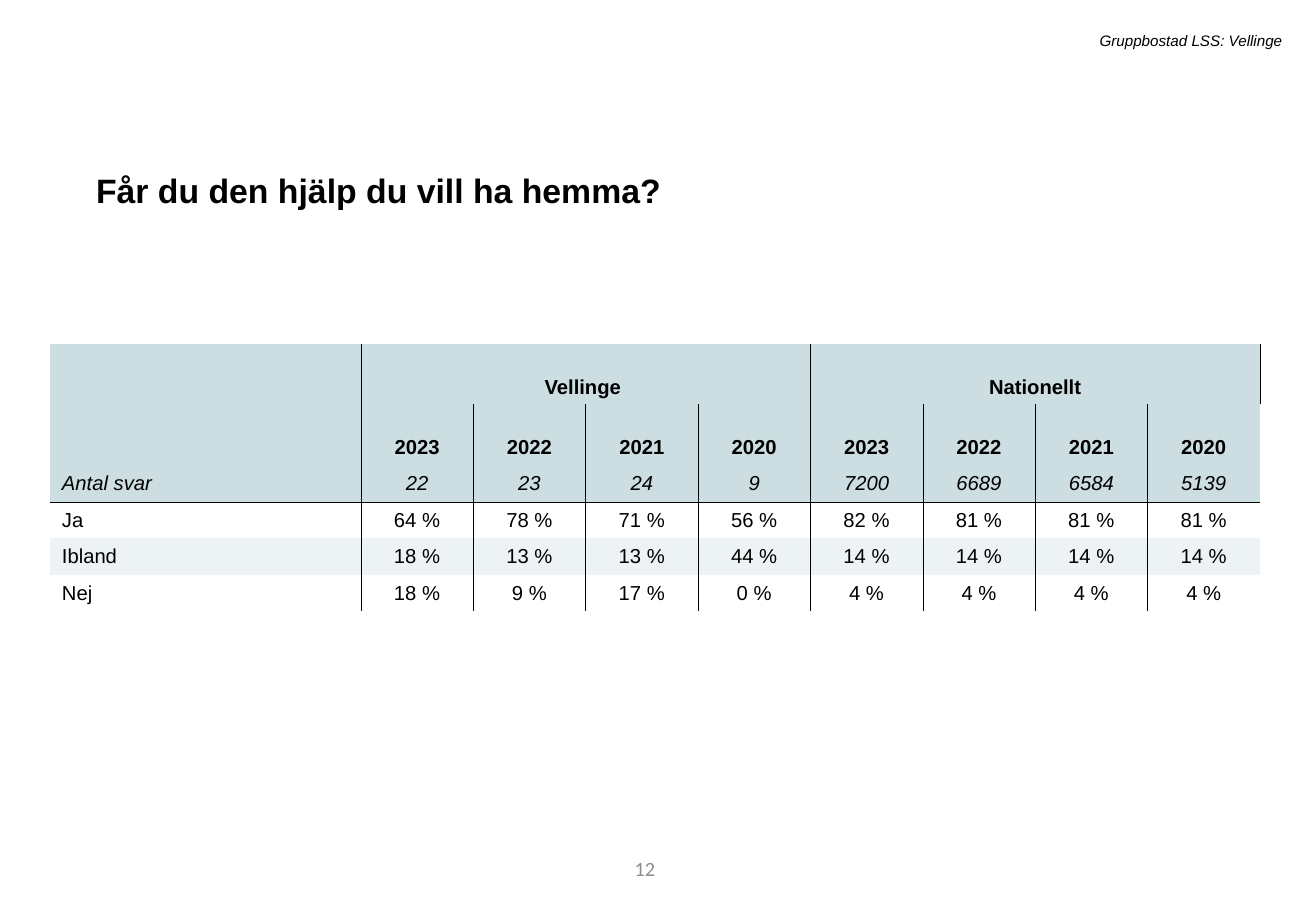
"""Build a slide with a table of survey answers for Vellinge and the nation."""
import pptx
import pptx.dml.color
import pptx.enum.text
import pptx.util
from lxml import etree
from pptx.util import Inches

HEADER = "Gruppbostad LSS: Vellinge"
QUESTION = "Får du den hjälp du vill ha hemma?"
PAGE_NUMBER = "12"
YEARS = ["2023", "2022", "2021", "2020"]
GROUPS = ["Vellinge ", "Nationellt"]
COUNTS = ["Antal svar", "22", "23", "24", "9", "7200", "6689", "6584", "5139"]
ANSWERS = {
    "Ja": [64, 78, 71, 56, 82, 81, 81, 81],
    "Ibland": [18, 13, 13, 44, 14, 14, 14, 14],
    "Nej": [18, 9, 17, 0, 4, 4, 4, 4],
}
COLUMN_WIDTHS = [2.56] + [0.925] * 8
ROW_HEIGHTS = [0.5, 0.5] + [0.3] * 4
ROW_FILLS = ["CCDEE1"] * 3 + [None, "EDF3F4", None]
COUNT_ROW = 2
NAMESPACE = "http://schemas.openxmlformats.org/drawingml/2006/main"
ALIGN = pptx.enum.text.PP_ALIGN
ANCHOR = pptx.enum.text.MSO_ANCHOR


def color(value):
    return pptx.dml.color.RGBColor.from_string(value)


def write(paragraph, text, size, align=ALIGN.LEFT, font="Arial", fill="000000", bold=False, italic=False):
    paragraph.alignment = align
    run = paragraph.add_run()
    run.text = text
    run.font.name = font
    run.font.size = pptx.util.Pt(size)
    run.font.bold = bold
    run.font.italic = italic
    run.font.color.rgb = color(fill)


def add_text(slide, box, text, size, **style):
    shape = slide.shapes.add_textbox(*map(Inches, box))
    shape.text_frame.word_wrap = True
    shape.text_frame.vertical_anchor = ANCHOR.MIDDLE
    write(shape.text_frame.paragraphs[0], text, size, ALIGN.RIGHT, **style)


def set_borders(cell, visible):
    properties = cell._tc.get_or_add_tcPr()
    for side in "LRTB":
        line = etree.SubElement(properties, f"{{{NAMESPACE}}}ln{side}", w="3175")
        if side in visible:
            fill = etree.SubElement(line, f"{{{NAMESPACE}}}solidFill")
            etree.SubElement(fill, f"{{{NAMESPACE}}}srgbClr", val="000000")
        else:
            etree.SubElement(line, f"{{{NAMESPACE}}}noFill")


def visible_sides(row, column):
    sides = "L" if column > 0 else ""
    sides += "R" if row == 0 or column < len(COLUMN_WIDTHS) - 1 else ""
    sides += "B" if row == COUNT_ROW else ""
    return sides + ("T" if row == COUNT_ROW + 1 else "")


def add_answer_table(slide):
    group_cells = [text for group in GROUPS for text in [group] + [""] * (len(YEARS) - 1)]
    rows = [[""] + group_cells, [""] + YEARS * len(GROUPS), COUNTS]
    rows += [[answer] + [f"{share} %" for share in shares] for answer, shares in ANSWERS.items()]
    size = (sum(COLUMN_WIDTHS), sum(ROW_HEIGHTS))
    frame = slide.shapes.add_table(len(rows), len(COLUMN_WIDTHS), *map(Inches, (0.41, 2.83, *size)))
    table = frame.table
    table.first_row = table.horz_banding = False
    for column, width in zip(table.columns, COLUMN_WIDTHS):
        column.width = Inches(width)
    for row, height in zip(table.rows, ROW_HEIGHTS):
        row.height = Inches(height)
    for r, texts in enumerate(rows):
        for c, text in enumerate(texts):
            cell = table.cell(r, c)
            set_borders(cell, visible_sides(r, c))
            if ROW_FILLS[r]:
                cell.fill.solid()
                cell.fill.fore_color.rgb = color(ROW_FILLS[r])
            else:
                cell.fill.background()
            cell.vertical_anchor = ANCHOR.BOTTOM if r < COUNT_ROW else ANCHOR.MIDDLE
            if text:
                write(cell.text_frame.paragraphs[0], text, 12, ALIGN.CENTER if c else ALIGN.LEFT,
                      bold=r < COUNT_ROW, italic=r == COUNT_ROW)
    for group in range(len(GROUPS)):
        first = 1 + group * len(YEARS)
        table.cell(0, first).merge(table.cell(0, first + len(YEARS) - 1))


def main():
    presentation = pptx.Presentation()
    presentation.slide_width = Inches(10.83)
    presentation.slide_height = Inches(7.5)
    slide = presentation.slides.add_slide(presentation.slide_layouts[5])

    title = slide.shapes.title
    title.left, title.top, title.width, title.height = map(Inches, (0.69, 1.28, 9.4, 0.47))
    title.text_frame.auto_size = pptx.enum.text.MSO_AUTO_SIZE.NONE
    title.text_frame.vertical_anchor = ANCHOR.TOP
    paragraph = title.text_frame.paragraphs[0]
    paragraph.line_spacing = 1.2
    paragraph.space_before = pptx.util.Pt(10)
    write(paragraph, QUESTION, 20, bold=True)

    add_text(slide, (3.05, 6.95, 2.44, 0.4), PAGE_NUMBER, 12, font="Calibri", fill="8C8C8C")
    add_answer_table(slide)
    add_text(slide, (1.79, 0.21, 8.86, 0.25), HEADER, 9, italic=True)
    presentation.save("out.pptx")


if __name__ == "__main__":
    main()
